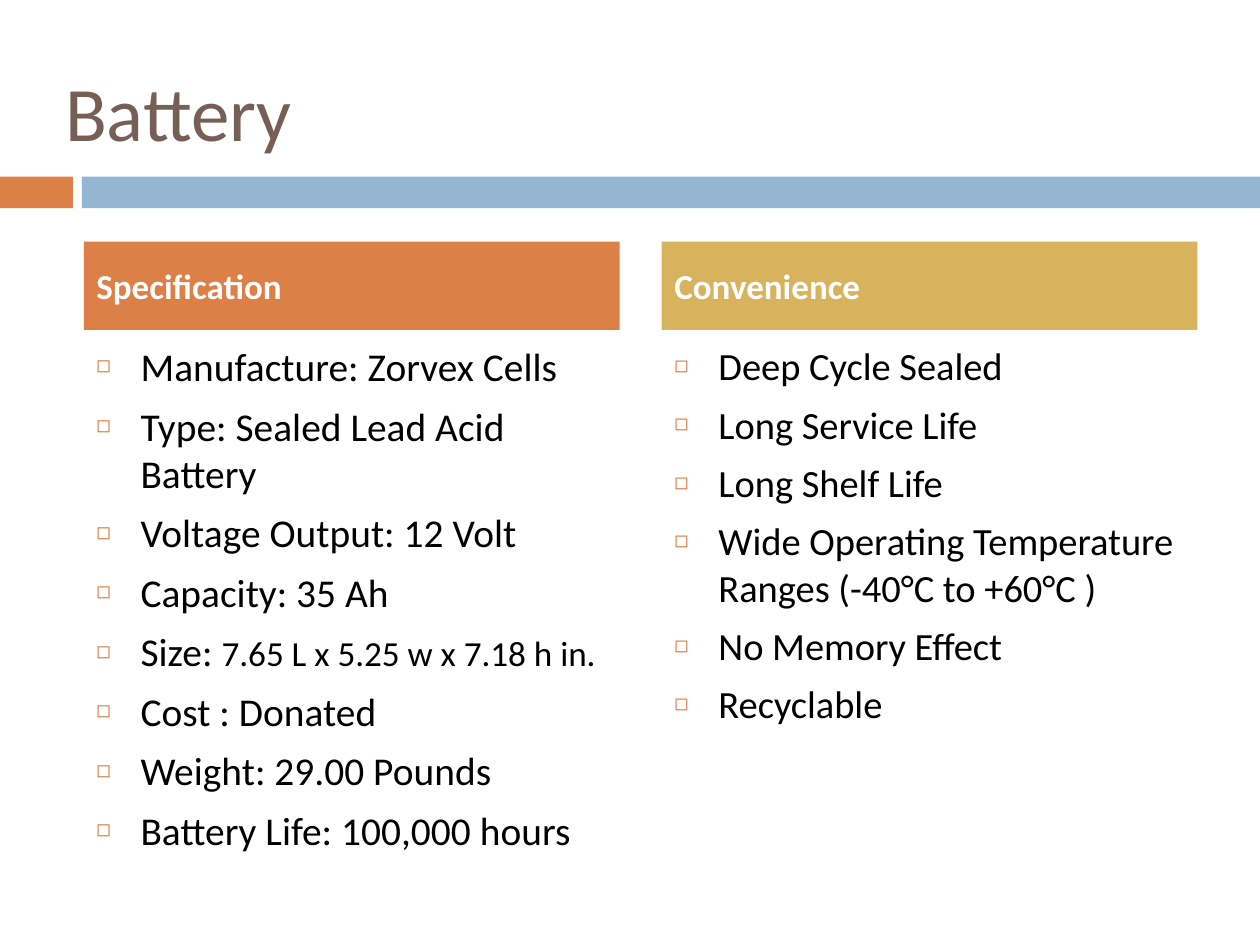
from lxml import etree
from pptx import Presentation
from pptx import util as u
from pptx.dml.color import RGBColor
from pptx.enum import shapes, text
from pptx.oxml import ns

COLORS = {
    "orange": "DD8047",
    "blue": "94B6D2",
    "gold": "D8B25C",
    "brown": "775F55",
    "black": "000000",
    "white": "FFFFFF",
}
FONT = "Calibri"
PAGE_WIDTH, PAGE_HEIGHT = 25.4, 19.05
INDENT = 0.89

SPECIFICATION = [
    ["Manufacture: Zorvex Cells"],
    ["Type: Sealed Lead Acid Battery"],
    ["Voltage Output: 12 Volt"],
    ["Capacity: 35 Ah"],
    ["Size: ", "7.65 L x 5.25 w x 7.18 h in."],
    ["Cost : Donated"],
    ["Weight: 29.00 Pounds"],
    ["Battery Life: 100,000 hours"],
]
CONVENIENCE = [
    ["Deep Cycle Sealed"],
    ["Long Service Life"],
    ["Long Shelf Life"],
    ["Wide Operating Temperature Ranges (-40°C to +60°C )"],
    ["No Memory Effect"],
    ["Recyclable"],
]


def rgb(name):
    return RGBColor.from_string(COLORS[name])


def place(shape, left, top, width, height):
    shape.left, shape.top = u.Cm(left), u.Cm(top)
    shape.width, shape.height = u.Cm(width), u.Cm(height)


def add_span(para, words, size=20, color="black", bold=False):
    span = para.add_run()
    span.text = words
    span.font.name = FONT
    span.font.size = u.Pt(size)
    span.font.bold = bold
    span.font.color.rgb = rgb(color)


def set_frame(shape, anchor):
    frame = shape.text_frame
    frame.word_wrap = True
    frame.auto_size = text.MSO_AUTO_SIZE.NONE
    frame.vertical_anchor = anchor
    return frame


def add_bullet(para):
    """Hang a small hollow square before the paragraph."""
    props = para._p.get_or_add_pPr()
    props.set("marL", str(u.Cm(INDENT)))
    props.set("indent", str(-u.Cm(INDENT)))
    color = etree.SubElement(props, ns.qn("a:buClr"))
    etree.SubElement(color, ns.qn("a:srgbClr"), val=COLORS["orange"])
    etree.SubElement(props, ns.qn("a:buSzPct"), val="60000")
    etree.SubElement(props, ns.qn("a:buChar"), char="◻")


def add_band(page, top, height, split, gap):
    """Short orange block, then a blue bar to the page edge."""
    start = split + gap
    for left, width, color in ((0, split, "orange"),
                               (start, PAGE_WIDTH - start, "blue")):
        bar = page.shapes.add_shape(shapes.MSO_SHAPE.RECTANGLE, u.Cm(left),
                                    u.Cm(top), u.Cm(width), u.Cm(height))
        bar.shadow.inherit = False
        bar.fill.solid()
        bar.fill.fore_color.rgb = rgb(color)
        bar.line.fill.background()


def fill_title(title, words, box):
    place(title, *box)
    para = set_frame(title, text.MSO_ANCHOR.MIDDLE).paragraphs[0]
    para.alignment = text.PP_ALIGN.LEFT
    add_span(para, words, size=44, color="brown")


def fill_column(header, body, box, heading, color, items, sizes):
    """Coloured heading above a bulleted list, both inside box."""
    left, top, width, height = box
    header_height, gap = 1.78, 0.12

    # Heading
    place(header, left, top, width, header_height)
    header.fill.solid()
    header.fill.fore_color.rgb = rgb(color)
    para = set_frame(header, text.MSO_ANCHOR.MIDDLE).paragraphs[0]
    para.space_before = u.Pt(7)
    add_span(para, heading, color="white", bold=True)

    # List
    offset = header_height + gap
    place(body, left, top + offset, width, height - offset)
    frame = set_frame(body, text.MSO_ANCHOR.TOP)
    for number, spans in enumerate(items):
        para = frame.add_paragraph() if number else frame.paragraphs[0]
        para.space_before = u.Pt(7)
        add_bullet(para)
        for words, size in zip(spans, sizes):
            add_span(para, words, size=size)


def main():
    deck = Presentation()
    deck.slide_width, deck.slide_height = u.Cm(PAGE_WIDTH), u.Cm(PAGE_HEIGHT)
    page = deck.slides.add_slide(deck.slide_layouts.get_by_name("Comparison"))
    title, left_head, left_list, right_head, right_list = page.placeholders

    add_band(page, top=3.56, height=0.64, split=1.47, gap=0.18)
    fill_title(title, "Battery", (1.06, 0.64, 22.86, 3.18))

    # Two equal columns
    left, top, width, height, gap = 1.69, 4.87, 10.8, 11.86, 0.85
    fill_column(left_head, left_list, (left, top, width, height),
                "Specification", "orange", SPECIFICATION, (22.5, 20.1))
    fill_column(right_head, right_list, (left + width + gap, top, width, height),
                "Convenience", "gold", CONVENIENCE, (22,))

    deck.save("out.pptx")


if __name__ == "__main__":
    main()
